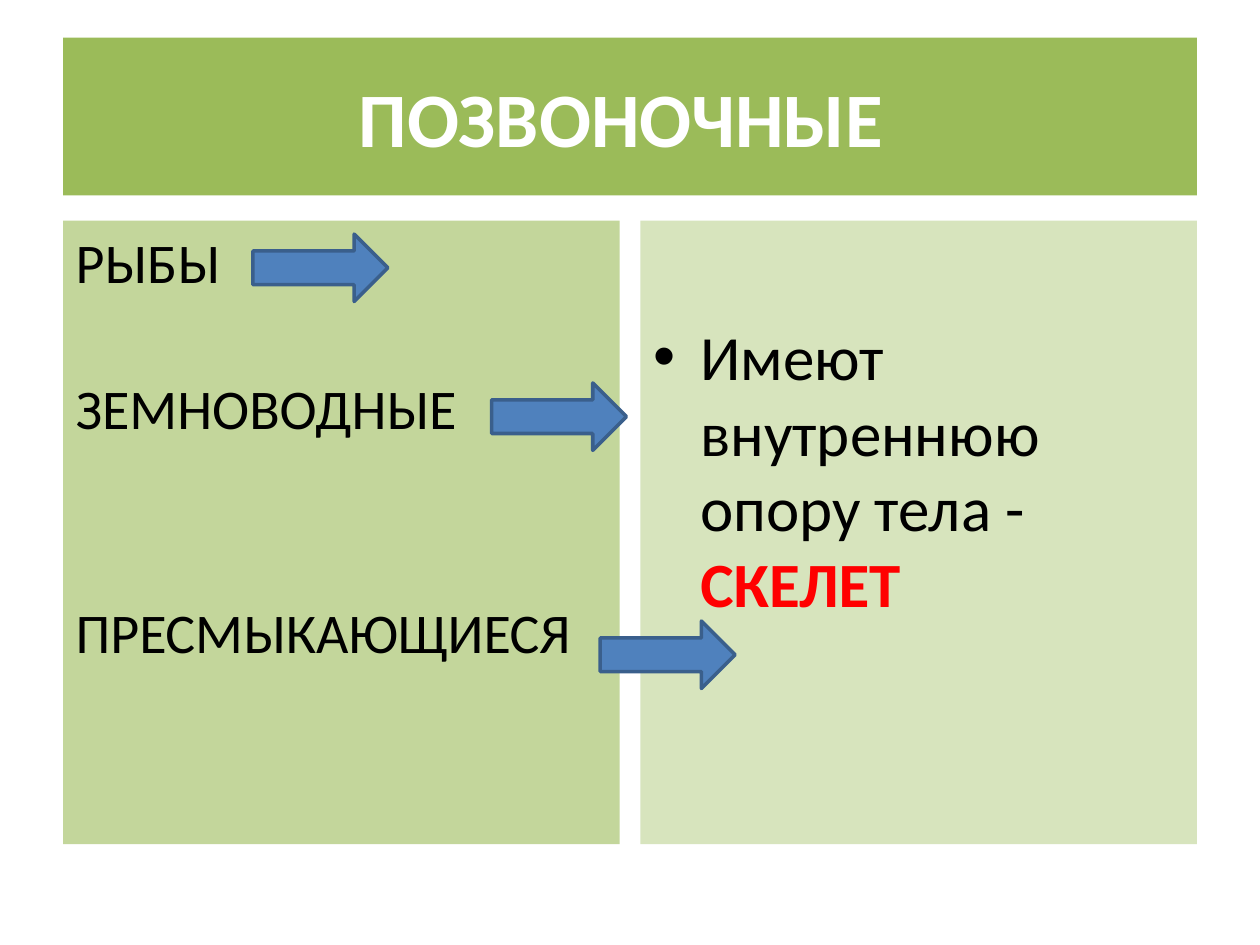
from typing import NamedTuple

from lxml.etree import SubElement
from pptx import Presentation
from pptx.dml.color import RGBColor
from pptx.enum.shapes import MSO_SHAPE
from pptx.enum.text import MSO_ANCHOR, MSO_AUTO_SIZE, PP_ALIGN
from pptx.oxml.ns import qn
from pptx.util import Cm, Pt

FONT = "Calibri"
LEFT, GAP, WIDTH = 1.27, 0.42, 22.86
PANEL_WIDTH = (WIDTH - GAP) / 2
PANEL_TOP, PANEL_HEIGHT = 4.45, 12.57


class Box(NamedTuple):
    left: float
    top: float
    width: float
    height: float
    fill: str


class Animal(NamedTuple):
    name: str
    space_before: int
    arrow_left: float
    arrow_top: float


ANIMALS = [
    Animal("РЫБЫ", 0, 5.1, 4.72),
    Animal("ЗЕМНОВОДНЫЕ", 45, 9.91, 7.72),
    Animal("ПРЕСМЫКАЮЩИЕСЯ", 90, 12.1, 12.52),
]


def color(value: str) -> RGBColor:
    return RGBColor.from_string(value)


def place(shape, box: Box) -> None:
    shape.left, shape.top = Cm(box.left), Cm(box.top)
    shape.width, shape.height = Cm(box.width), Cm(box.height)
    shape.fill.solid()
    shape.fill.fore_color.rgb = color(box.fill)
    shape.text_frame.auto_size = MSO_AUTO_SIZE.NONE


def style(r, size: int, value: str = "000000", bold: bool = False) -> None:
    r.font.name, r.font.size, r.font.bold = FONT, Pt(size), bold
    r.font.color.rgb = color(value)


def add_arrow(s, left: float, top: float) -> None:
    arrow = s.shapes.add_shape(
        MSO_SHAPE.RIGHT_ARROW, Cm(left), Cm(top), Cm(2.72), Cm(1.36))
    arrow.shadow.inherit = False
    arrow.fill.solid()
    arrow.fill.fore_color.rgb = color("4F81BD")
    arrow.line.color.rgb = color("3A5F8C")
    arrow.line.width = Pt(2)


def main() -> None:
    prs = Presentation()
    prs.slide_width, prs.slide_height = Cm(25.4), Cm(19.05)
    s = prs.slides.add_slide(prs.slide_layouts[3])
    title, animals, feature = s.placeholders

    # Title band; the trailing space shifts the centred text slightly
    place(title, Box(LEFT, 0.76, WIDTH, 3.18, "9BBB59"))
    tf = title.text_frame
    tf.vertical_anchor = MSO_ANCHOR.MIDDLE
    tf.text = "ПОЗВОНОЧНЫЕ "
    p = tf.paragraphs[0]
    p.alignment = PP_ALIGN.CENTER
    style(p.runs[0], 44, "FFFFFF", True)

    # Left panel: animal classes without bullets
    place(animals, Box(LEFT, PANEL_TOP, PANEL_WIDTH, PANEL_HEIGHT, "C3D69B"))
    tf = animals.text_frame
    tf.text = "\n".join(animal.name for animal in ANIMALS)
    for p, animal in zip(tf.paragraphs, ANIMALS):
        p.space_before = Pt(animal.space_before)
        SubElement(p._p.get_or_add_pPr(), qn("a:buNone"))
        style(p.runs[0], 32)

    # Right panel: the shared feature
    place(feature, Box(LEFT + PANEL_WIDTH + GAP, PANEL_TOP,
                       PANEL_WIDTH, PANEL_HEIGHT, "D7E4BD"))
    tf = feature.text_frame
    tf.margin_top = Cm(1.95)
    tf.text = "Имеют внутреннюю опору тела - "
    p = tf.paragraphs[0]
    p.space_before = Pt(0)
    style(p.runs[0], 36)
    r = p.add_run()
    r.text = "СКЕЛЕТ"
    style(r, 36, "FF0000", True)

    # Arrows beside the animal classes
    for animal in ANIMALS:
        add_arrow(s, animal.arrow_left, animal.arrow_top)

    prs.save("out.pptx")


if __name__ == "__main__":
    main()
